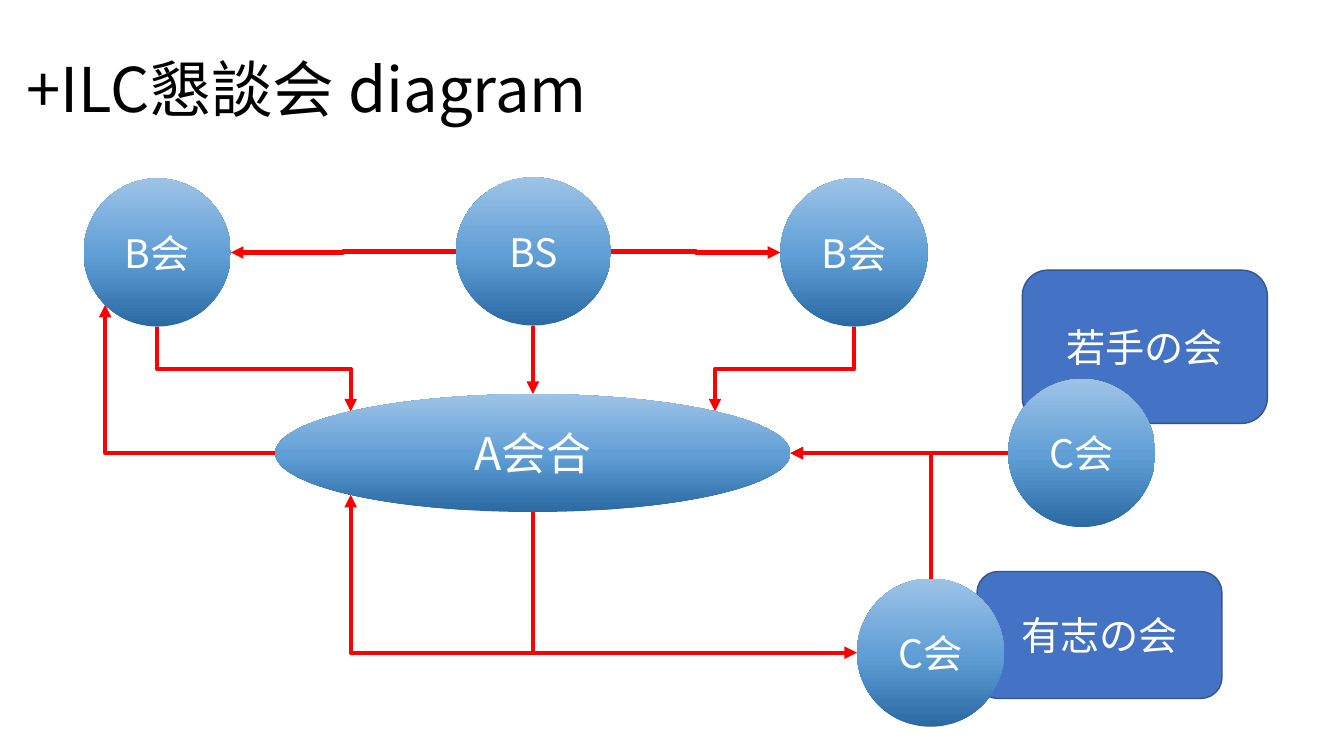
from copy import deepcopy
from math import cos, pi, sin

from lxml import etree
from pptx import Presentation
from pptx.dml.color import RGBColor
from pptx.enum import shapes, text
from pptx.oxml import ns
from pptx.util import Inches, Pt

WHITE = RGBColor(0xFF, 0xFF, 0xFF)
BLACK = RGBColor(0, 0, 0)
RED = RGBColor(0xFF, 0, 0)
BOX_BLUE = RGBColor(0x44, 0x72, 0xC4)
BOX_EDGE = RGBColor(0x32, 0x54, 0x91)
GRADIENT = [
    (0, RGBColor(0x2A, 0x69, 0xA2)),
    (0.48, RGBColor(0x60, 0x9E, 0xD6)),
    (1, RGBColor(0x9D, 0xC3, 0xE6)),
]

# Connection sites of an ellipse, counterclockwise from the top
TOP, TOP_LEFT, LEFT, BOTTOM_LEFT, BOTTOM, _, RIGHT, TOP_RIGHT = range(8)


def site_point(oval, site):
    angle = site * pi / 4
    x = oval.left + oval.width / 2 * (1 - sin(angle))
    y = oval.top + oval.height / 2 * (1 - cos(angle))
    return x, y


class Diagram:
    font = "Noto Sans CJK JP"

    def __init__(self, slide):
        self.slide = slide

    def label(self, frame, wording, size, color, align):
        frame.text = wording
        frame.word_wrap = True
        frame.vertical_anchor = text.MSO_ANCHOR.MIDDLE
        paragraph = frame.paragraphs[0]
        paragraph.alignment = align
        for run in paragraph.runs:
            run.font.size = Pt(size)
            run.font.name = self.font
            run.font.color.rgb = color
            east_asian = etree.SubElement(run.font._element, ns.qn("a:ea"))
            east_asian.set("typeface", self.font)

    def title(self, wording, left, top, width, height):
        heading = self.slide.shapes.title
        heading.left, heading.top = Inches(left), Inches(top)
        heading.width, heading.height = Inches(width), Inches(height)
        self.label(heading.text_frame, wording, 44, BLACK, text.PP_ALIGN.LEFT)
        heading.text_frame.paragraphs[0].line_spacing = 0.9

    def node(self, preset, wording, left, top, width, height, size):
        node = self.slide.shapes.add_shape(
            preset, Inches(left), Inches(top), Inches(width), Inches(height))
        node.shadow.inherit = False
        self.label(node.text_frame, wording, size, WHITE, text.PP_ALIGN.CENTER)
        return node

    def box(self, wording, left, top, width, height):
        box = self.node(shapes.MSO_SHAPE.ROUNDED_RECTANGLE, wording,
                        left, top, width, height, 28)
        box.fill.solid()
        box.fill.fore_color.rgb = BOX_BLUE
        box.line.color.rgb = BOX_EDGE
        box.line.width = Pt(1)

    def oval(self, wording, left, top, width=1.46, height=1.47, size=28):
        oval = self.node(shapes.MSO_SHAPE.OVAL, wording,
                         left, top, width, height, size)
        oval.line.fill.background()
        oval.fill.gradient()
        oval.fill.gradient_angle = 90
        stops = oval._element.spPr.find(".//" + ns.qn("a:gsLst"))
        stops.append(deepcopy(stops[-1]))
        for stop, (position, color) in zip(oval.fill.gradient_stops, GRADIENT):
            stop.position = position
            stop.color.rgb = color
        return oval

    def arrow(self, source, source_site, target, target_site,
              corner=False, bend=None):
        """Glue an elbow arrow to two ovals.

        corner gives one turn instead of two; bend is the height in inches
        of the middle stretch, halfway if left out.
        """
        x1, y1 = site_point(source, source_site)
        x2, y2 = site_point(target, target_site)
        dx, dy = x2 - x1, y2 - y1
        arrow = self.slide.shapes.add_connector(
            shapes.MSO_CONNECTOR.ELBOW, 0, 0, 0, 0)
        arrow.line.color.rgb = RED
        arrow.line.width = Pt(3)

        # An elbow starts sideways, so one that starts up or down is turned
        vertical = source_site in (TOP, BOTTOM)
        along, across = (dy, -dx) if vertical else (dx, dy)
        arrow.width, arrow.height = round(abs(along)), round(abs(across))
        arrow.left = round((x1 + x2 - arrow.width) / 2)
        arrow.top = round((y1 + y2 - arrow.height) / 2)
        properties = arrow._element.spPr
        frame = properties.find(ns.qn("a:xfrm"))
        if vertical:
            frame.set("rot", str(90 * 60000))
        if along < 0:
            frame.set("flipH", "1")
        if across < 0:
            frame.set("flipV", "1")

        geometry = properties.find(ns.qn("a:prstGeom"))
        if corner:
            geometry.set("prst", "bentConnector2")
        elif bend is not None:
            share = round((Inches(bend) - y1) / dy * 100000)
            guide = etree.SubElement(geometry.find(ns.qn("a:avLst")),
                                     ns.qn("a:gd"))
            guide.set("name", "adj1")
            guide.set("fmla", f"val {share}")

        line = properties.find(ns.qn("a:ln"))
        etree.SubElement(line, ns.qn("a:tailEnd")).set("type", "triangle")
        etree.SubElement(properties, ns.qn("a:effectLst"))

        glue = arrow._element.find(".//" + ns.qn("p:cNvCxnSpPr"))
        for tag, oval, site in (("a:stCxn", source, source_site),
                                ("a:endCxn", target, target_site)):
            end = etree.SubElement(glue, ns.qn(tag))
            end.set("id", str(oval.shape_id))
            end.set("idx", str(site))


def main():
    deck = Presentation()
    deck.slide_width, deck.slide_height = Inches(13.33), Inches(7.5)
    title_only = deck.slide_layouts[5]
    diagram = Diagram(deck.slides.add_slide(title_only))

    diagram.title("+ILC懇談会 diagram", 0.16, 0.19, 8.34, 1.45)
    diagram.box("有志の会", 9.69, 5.67, 2.43, 1.26)
    diagram.box("若手の会", 10.14, 2.68, 2.43, 1.52)

    assembly = diagram.oval("A会合", 2.73, 3.91, 5.11, 1.17, 32)
    bs = diagram.oval("BS", 4.52, 1.76, 1.54)
    volunteers = diagram.oval("C会", 8.5, 5.74)
    left_b = diagram.oval("B会", 0.83, 1.77)
    right_b = diagram.oval("B会", 7.74, 1.77)
    young = diagram.oval("C会", 10, 3.76)

    diagram.arrow(bs, LEFT, left_b, RIGHT)
    diagram.arrow(bs, RIGHT, right_b, LEFT)
    diagram.arrow(bs, BOTTOM, assembly, TOP)
    diagram.arrow(left_b, BOTTOM, assembly, TOP_LEFT)
    diagram.arrow(right_b, BOTTOM, assembly, TOP_RIGHT)
    diagram.arrow(assembly, BOTTOM, volunteers, LEFT, corner=True)
    diagram.arrow(volunteers, TOP, assembly, RIGHT, corner=True)
    diagram.arrow(assembly, LEFT, left_b, BOTTOM_LEFT, corner=True)
    diagram.arrow(assembly, BOTTOM, assembly, BOTTOM_LEFT, bend=6.48)
    diagram.arrow(young, LEFT, assembly, RIGHT)

    deck.save("out.pptx")


if __name__ == "__main__":
    main()
